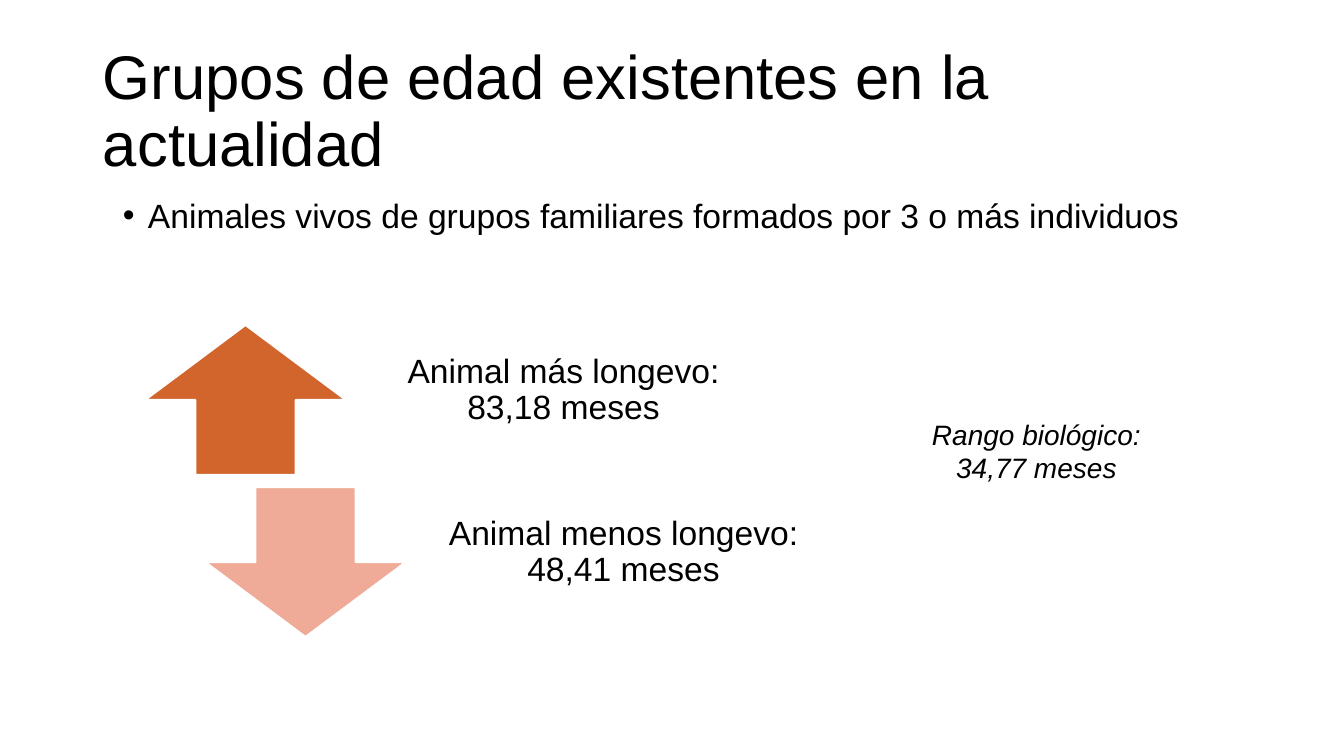
from lxml.etree import SubElement
from pptx import Presentation
from pptx.dml.color import RGBColor
from pptx.enum.shapes import MSO_SHAPE
from pptx.enum.text import MSO_ANCHOR, MSO_AUTO_SIZE, PP_ALIGN
from pptx.oxml.ns import qn
from pptx.util import Pt

EMU_PER_PX = 914400 / 100.8


def px(length):
    """Turn a length in pixels into EMU."""
    return round(length * EMU_PER_PX)


def color(hex_string):
    """Turn a hex string into a colour."""
    return RGBColor.from_string(hex_string)


def write_text(shape, text, *, font="Arial", size=24, ink="000000", italic=False,
               align=PP_ALIGN.LEFT, anchor=MSO_ANCHOR.TOP, spacing=0.9,
               margins=(10, 5, 10, 5)):
    """Write formatted text into a shape and return its paragraph."""
    frame = shape.text_frame
    frame.word_wrap = True
    frame.auto_size = MSO_AUTO_SIZE.NONE
    frame.vertical_anchor = anchor
    (frame.margin_left, frame.margin_top,
     frame.margin_right, frame.margin_bottom) = map(px, margins)
    paragraph = frame.paragraphs[0]
    paragraph.alignment = align
    paragraph.line_spacing = spacing
    run = paragraph.add_run()
    run.text = text
    run.font.name = font
    run.font.size = Pt(size)
    run.font.italic = italic
    run.font.color.rgb = color(ink)
    return paragraph


class SlideBuilder:
    """Hold the style and the current slide."""

    line_color = "FFFFFF"
    line_width = 1.5
    bullet_indent = 25

    def __init__(self, presentation):
        """Add a title-only slide."""
        self.slide = presentation.slides.add_slide(presentation.slide_layouts[5])

    def title(self, text, left, top, width, height):
        """Place and fill the title."""
        shape = self.slide.shapes.title
        shape.left, shape.top, shape.width, shape.height = map(px, (left, top, width, height))
        write_text(shape, text, size=44, anchor=MSO_ANCHOR.MIDDLE)

    def text(self, text, left, top, width, height, **text_format):
        """Add a text box and return its paragraph."""
        box = self.slide.shapes.add_textbox(*map(px, (left, top, width, height)))
        return write_text(box, text, **text_format)

    def bullet(self, text, left, top, width, height):
        """Add a text box with one bulleted paragraph."""
        paragraph = self.text(text, left, top, width, height)
        properties = paragraph._p.get_or_add_pPr()
        properties.set("marL", str(px(self.bullet_indent)))
        properties.set("indent", str(-px(self.bullet_indent)))
        SubElement(properties, qn("a:buFont")).set("typeface", "Arial")
        SubElement(properties, qn("a:buChar")).set("char", "•")

    def arrow(self, preset, fill, left, top, width, height):
        """Add a filled block arrow."""
        shape = self.slide.shapes.add_shape(preset, *map(px, (left, top, width, height)))
        shape.shadow.inherit = False
        shape.fill.solid()
        shape.fill.fore_color.rgb = color(fill)
        shape.line.color.rgb = color(self.line_color)
        shape.line.width = Pt(self.line_width)


def main():
    """Build and save the slide."""
    presentation = Presentation()
    presentation.slide_width, presentation.slide_height = px(1344), px(756)
    builder = SlideBuilder(presentation)
    builder.title("Grupos de edad existentes en la actualidad", 93, 40, 1159, 146)
    builder.bullet("Animales vivos de grupos familiares formados por 3 o más individuos",
                   113, 194, 1239, 480)

    longevity = [
        (MSO_SHAPE.UP_ARROW, "D1652B", "Animal más longevo: 83,18 meses"),
        (MSO_SHAPE.DOWN_ARROW, "EFAB97", "Animal menos longevo: 48,41 meses"),
    ]
    for index, (preset, fill, label) in enumerate(longevity):
        left, top = 145 + 60 * index, 325 + 162 * index
        builder.arrow(preset, fill, left, top, 201, 150)
        builder.text(label, left + 207, top, 423, 150, align=PP_ALIGN.CENTER,
                     anchor=MSO_ANCHOR.MIDDLE, margins=(19, 0, 19, 19))

    builder.text("Rango biológico: 34,77 meses", 888, 412, 297, 78, size=20,
                 italic=True, align=PP_ALIGN.CENTER, spacing=1.0)
    presentation.save("out.pptx")


if __name__ == "__main__":
    main()
